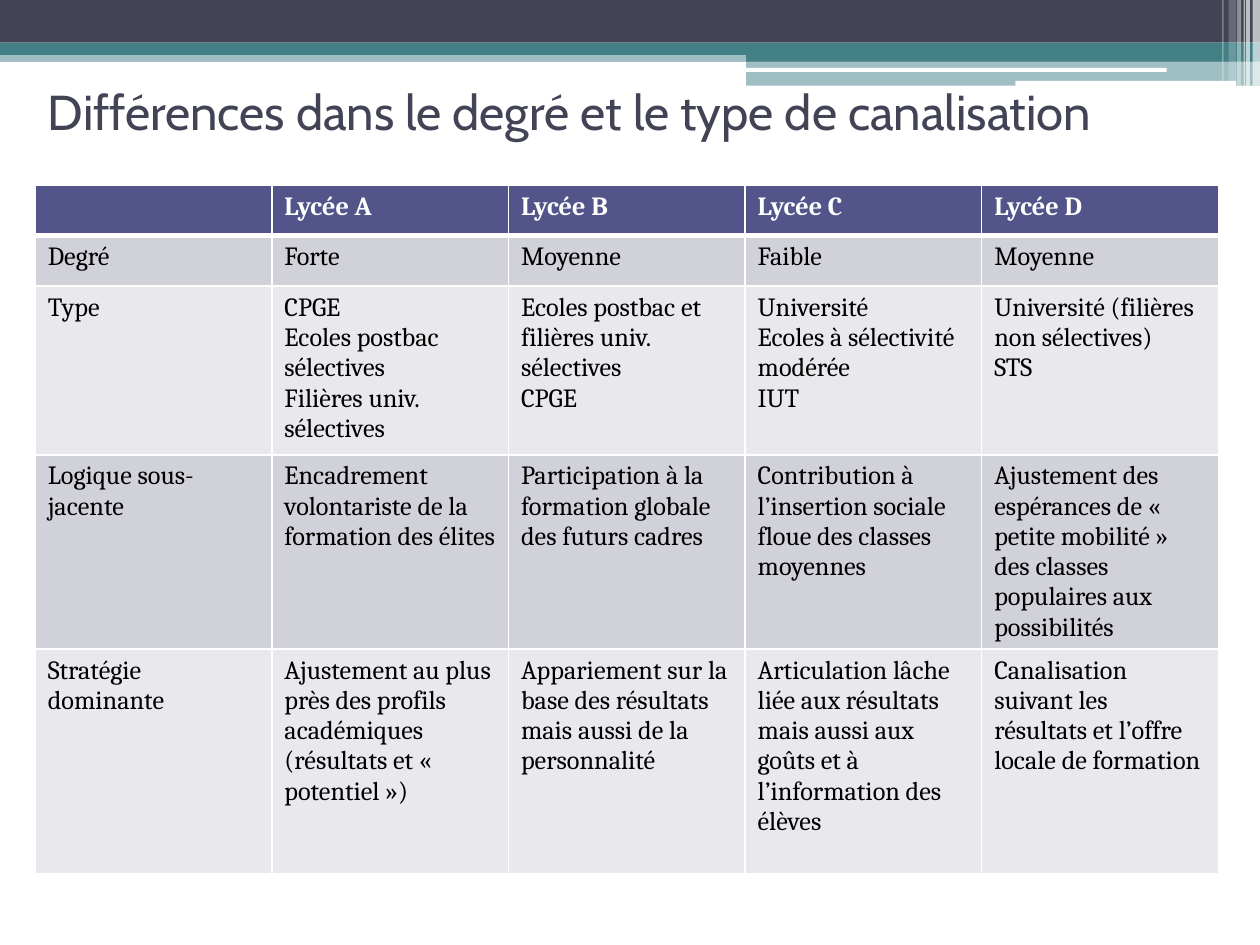
from dataclasses import dataclass

from lxml.etree import SubElement
from pptx import Presentation
from pptx.dml.color import RGBColor
from pptx.enum.shapes import MSO_SHAPE
from pptx.enum.text import MSO_ANCHOR, PP_ALIGN
from pptx.oxml.ns import qn
from pptx.util import Cm, Pt


@dataclass(frozen=True)
class Theme:
    navy: str = "424456"
    teal: str = "438086"
    white: str = "FFFFFF"
    black: str = "000000"
    header_fill: str = "53548A"
    row_fills: tuple = ("D1D1DA", "E9E9ED")
    title_font: str = "Cabin"
    body_font: str = "Cambria"
    title_size: int = 28
    table_size: int = 15


@dataclass(frozen=True)
class Box:
    left: float
    top: float
    width: float
    height: float


THEME = Theme()

ROW_HEIGHTS = (1.02, 1.02, 3.4, 3.91, 4.52)

TABLE_ROWS = (
    ("", "Lycée A", "Lycée B", "Lycée C", "Lycée D"),
    ("Degré", "Forte", "Moyenne", "Faible", "Moyenne"),
    (
        "Type",
        "CPGE\nEcoles postbac sélectives\nFilières univ. sélectives",
        "Ecoles postbac et filières univ. sélectives\nCPGE",
        "Université\nEcoles à sélectivité modérée\nIUT",
        "Université (filières non sélectives)\nSTS",
    ),
    (
        "Logique sous-jacente",
        "Encadrement volontariste de la formation des élites",
        "Participation à la formation globale des futurs cadres",
        "Contribution à l’insertion sociale floue des classes moyennes",
        "Ajustement des espérances de « petite mobilité » des classes populaires aux possibilités",
    ),
    (
        "Stratégie dominante",
        "Ajustement au plus près des profils académiques (résultats et « potentiel »)",
        "Appariement sur la base des résultats mais aussi de la  personnalité ",
        "Articulation lâche liée aux résultats mais aussi aux goûts et à l’information des élèves",
        "Canalisation suivant les résultats et l’offre locale de formation",
    ),
)


def write_text(text_frame, text, font, size, color, bold=False):
    text_frame.text = text
    for paragraph in text_frame.paragraphs:
        paragraph.alignment = PP_ALIGN.LEFT
        paragraph.font.size = Pt(size)
        for run in paragraph.runs:
            run.font.name = font
            run.font.size = Pt(size)
            run.font.bold = bold
            run.font.color.rgb = RGBColor.from_string(color)


def add_band(slide, box, color, opacity=100, kind=MSO_SHAPE.RECTANGLE):
    shape = slide.shapes.add_shape(
        kind, Cm(box.left), Cm(box.top), Cm(box.width), Cm(box.height)
    )
    shape.shadow.inherit = False
    shape.line.fill.background()
    shape.fill.solid()
    shape.fill.fore_color.rgb = RGBColor.from_string(color)
    if opacity < 100:
        color_element = shape.fill._xPr.find(qn("a:solidFill"))[0]
        SubElement(color_element, qn("a:alpha"), val=str(opacity * 1000))


def add_header(slide, box):
    side_left, side_width = 15.04, 10.36
    bands = (
        (0, 1.02, box.width, 0.23, THEME.teal, 50),
        (0, 0, box.width, 0.86, THEME.navy, 100),
        (0, 0.86, box.width, 0.25, THEME.teal, 100),
        (side_left, 0.99, side_width, 0.25, THEME.teal, 100),
        (side_left, 1.22, side_width, 0.51, THEME.teal, 50),
    )
    for left, top, width, height, color, opacity in bands:
        place = Box(box.left + left, box.top + top, width, height)
        add_band(slide, place, color, opacity)

    for left, top, width, height in ((15.01, 1.37, 8.51, 0.08), (20.47, 1.63, 4.45, 0.1)):
        place = Box(box.left + left, box.top + top, width, height)
        add_band(slide, place, THEME.white, kind=MSO_SHAPE.ROUNDED_RECTANGLE)

    stripes = (
        (25.25, 0.15, 1.73, 65),
        (25.12, 0.08, 1.73, 65),
        (25.07, 0.03, 1.73, 60),
        (24.94, 0.08, 1.73, 40),
        (24.77, 0.15, 1.63, 20),
        (24.64, 0.03, 1.63, 30),
    )
    for left, width, height, opacity in stripes:
        place = Box(box.left + left, box.top, width, height)
        add_band(slide, place, THEME.white, opacity)


def add_title(slide, box, text):
    title = slide.shapes.title
    title.left, title.top = Cm(box.left), Cm(box.top)
    title.width, title.height = Cm(box.width), Cm(box.height)
    title.text_frame.vertical_anchor = MSO_ANCHOR.MIDDLE
    write_text(title.text_frame, text, THEME.title_font, THEME.title_size, THEME.navy)
    slide.shapes._spTree.append(title._element)


def set_borders(cell, top, bottom):
    properties = cell._tc.get_or_add_tcPr()
    for side, width in (("L", 1), ("R", 1), ("T", top), ("B", bottom)):
        line = SubElement(properties, qn(f"a:ln{side}"), w=str(Pt(width)))
        fill = SubElement(line, qn("a:solidFill"))
        SubElement(fill, qn("a:srgbClr"), val=THEME.white)


def add_comparison_table(slide, box, rows, row_heights):
    table = slide.shapes.add_table(
        len(rows), len(rows[0]), Cm(box.left), Cm(box.top), Cm(box.width), Cm(box.height)
    ).table
    for column in table.columns:
        column.width = Cm(box.width / len(rows[0]))
    for row_index, texts in enumerate(rows):
        table.rows[row_index].height = Cm(row_heights[row_index])
        is_header = row_index == 0
        fill = THEME.header_fill if is_header else THEME.row_fills[(row_index - 1) % 2]
        color = THEME.white if is_header else THEME.black
        for column_index, text in enumerate(texts):
            cell = table.cell(row_index, column_index)
            set_borders(cell, top=3 if row_index == 1 else 1, bottom=3 if is_header else 1)
            cell.fill.solid()
            cell.fill.fore_color.rgb = RGBColor.from_string(fill)
            write_text(
                cell.text_frame, text, THEME.body_font, THEME.table_size, color, bold=is_header
            )


def main():
    presentation = Presentation()
    presentation.slide_width, presentation.slide_height = Cm(25.4), Cm(19.05)
    slide = presentation.slides.add_slide(presentation.slide_layouts[5])
    add_header(slide, Box(0, 0, 25.4, 1.73))
    add_title(
        slide,
        Box(0.71, 0.76, 23.42, 2.97),
        "Différences dans le degré et le type de canalisation",
    )
    add_comparison_table(
        slide, Box(0.71, 3.73, 23.85, sum(ROW_HEIGHTS)), TABLE_ROWS, ROW_HEIGHTS
    )
    presentation.save("out.pptx")


if __name__ == "__main__":
    main()
